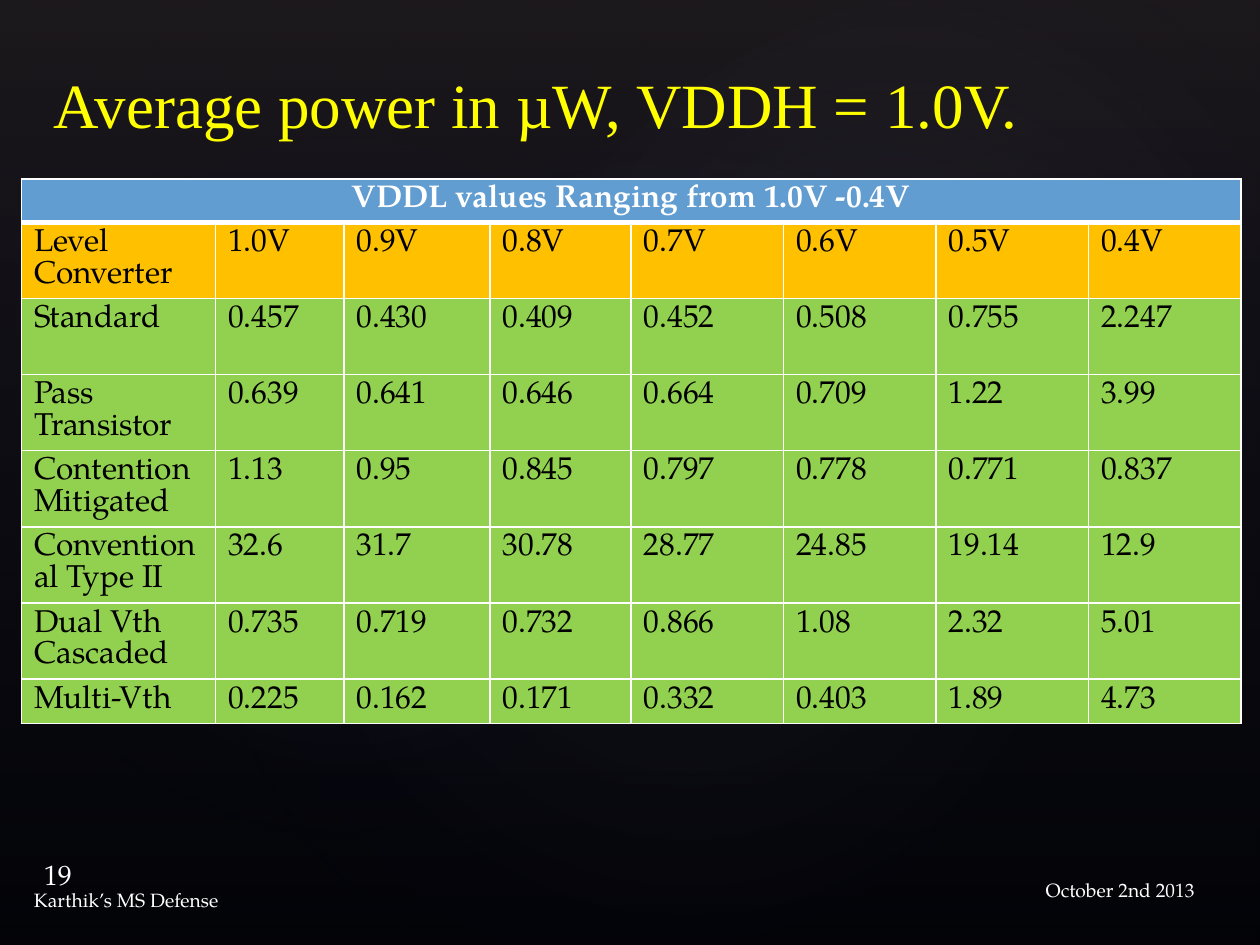
from typing import NamedTuple

from lxml.etree import SubElement
from pptx import Presentation
from pptx.dml.color import RGBColor
from pptx.enum.shapes import MSO_SHAPE as Preset
from pptx.enum.text import MSO_ANCHOR as Anchor, PP_ALIGN as Align
from pptx.oxml import parse_xml
from pptx.oxml.ns import nsdecls, qn
from pptx.util import Inches, Pt

WIDTH, HEIGHT = 10, 7.5
BLACK = RGBColor(0, 0, 0)
WHITE = RGBColor(255, 255, 255)
YELLOW = RGBColor(0xFF, 0xFF, 0)
BLUE = RGBColor(0x62, 0x9D, 0xD1)
AMBER = RGBColor(0xFF, 0xC0, 0)
GREEN = RGBColor(0x92, 0xD0, 0x50)
PLUM = RGBColor(0x50, 0x46, 0x52)
NAVY = RGBColor(0x24, 0x28, 0x52)
MIST = RGBColor(0xC4, 0xBC, 0xC6)
BODY_FONT, TITLE_FONT = "TeX Gyre Pagella", "Times New Roman"

COLUMN_WIDTHS = [1.54, 1.02, 1.16, 1.12] + [1.21] * 4
ROW_HEIGHTS = [0.34] + [0.604] * 6 + [0.35]
CAPTION = "VDDL values Ranging from 1.0V -0.4V"
POWER_ROWS = [
    ("Level\nConverter", "1.0V 0.9V 0.8V 0.7V 0.6V 0.5V 0.4V"),
    ("Standard", "0.457 0.430 0.409 0.452 0.508 0.755 2.247"),
    ("Pass Transistor", "0.639 0.641 0.646 0.664 0.709 1.22 3.99"),
    ("Contention Mitigated", "1.13 0.95 0.845 0.797 0.778 0.771 0.837"),
    ("Conventional Type II", "32.6 31.7 30.78 28.77 24.85 19.14 12.9"),
    ("Dual Vth\nCascaded", "0.735 0.719 0.732 0.866 1.08 2.32 5.01"),
    ("Multi-Vth", "0.225 0.162 0.171 0.332 0.403 1.89 4.73"),
]


class Box(NamedTuple):
    left: float
    top: float
    width: float
    height: float

    def emu(self) -> list:
        return [Inches(length) for length in self]


class Stop(NamedTuple):
    position: int
    color: RGBColor
    opacity: int


class Glow(NamedTuple):
    box: Box
    rotation: float
    opacity: int


class Label(NamedTuple):
    text: str
    box: Box
    size: int
    color: RGBColor = WHITE
    font: str = BODY_FONT
    align: Align = Align.LEFT
    anchor: Anchor = Anchor.TOP
    bottom_inset: float = 0.05


GLOWS = [
    Glow(Box(1.5, 1.14, 7.92, 6.24), 328.7, 7),
    Glow(Box(-0.3, 1.28, 6.06, 4.9), 294.3, 8),
    Glow(Box(3.58, 0.13, 7.09, 5.2), 328.7, 8),
]
LABELS = [
    Label("Average power in µW, VDDH = 1.0V.", Box(0.33, 0.17, 9.42, 1), 36,
          YELLOW, TITLE_FONT, anchor=Anchor.BOTTOM),
    Label("October 2nd 2013", Box(7.25, 6.92, 2.33, 0.4), 11, align=Align.RIGHT),
    Label("19", Box(0.25, 6.75, 2.33, 0.33), 16, anchor=Anchor.BOTTOM, bottom_inset=0.01),
    Label("Karthik’s MS Defense", Box(0.17, 7, 5, 0.4), 11),
]


def style_text(frame, size: int, color: RGBColor, font: str,
               align: Align = Align.LEFT, bold: bool = False) -> None:
    for paragraph in frame.paragraphs:
        paragraph.alignment = align
        for run in paragraph.runs:
            run.font.size, run.font.name, run.font.bold = Pt(size), font, bold
            run.font.color.rgb = color


def add_gradient(slide, preset: Preset, box: Box, stops: list[Stop],
                 direction: str, rotation: float = 0) -> None:
    """Add a borderless shape with a translucent gradient; direction is its XML element."""
    shape = slide.shapes.add_shape(preset, *box.emu())
    shape.shadow.inherit = False
    shape.rotation = rotation
    shape.line.fill.background()
    stop_xml = "".join(
        f'<a:gs pos="{stop.position * 1000}"><a:srgbClr val="{stop.color}">'
        f'<a:alpha val="{stop.opacity * 1000}"/></a:srgbClr></a:gs>' for stop in stops)
    gradient = parse_xml(f'<a:gradFill {nsdecls("a")} rotWithShape="1">'
                         f"<a:gsLst>{stop_xml}</a:gsLst>{direction}</a:gradFill>")
    shape._element.spPr.find(qn("a:prstGeom")).addnext(gradient)


def add_backdrop(slide) -> None:
    slide.background.fill.solid()
    slide.background.fill.fore_color.rgb = BLACK
    add_gradient(slide, Preset.RECTANGLE, Box(0, 0, WIDTH, HEIGHT),
                 [Stop(0, PLUM, 36), Stop(100, NAVY, 10)], '<a:lin ang="5400000" scaled="0"/>')
    radial = ('<a:path path="circle"><a:fillToRect l="50000" t="50000" '
              'r="50000" b="50000"/></a:path>')
    for glow in GLOWS:
        add_gradient(slide, Preset.OVAL, glow.box,
                     [Stop(0, MIST, glow.opacity), Stop(58, NAVY, 0), Stop(100, NAVY, 0)],
                     radial, glow.rotation)


def add_label(slide, label: Label) -> None:
    frame = slide.shapes.add_textbox(*label.box.emu()).text_frame
    frame.word_wrap = True
    frame.vertical_anchor = label.anchor
    frame.margin_bottom = Inches(label.bottom_inset)
    frame.text = label.text
    style_text(frame, label.size, label.color, label.font, label.align)


def set_borders(cell, top: float = 1, bottom: float = 1) -> None:
    properties = cell._tc.get_or_add_tcPr()
    for index, (side, points) in enumerate(zip("LRTB", (1, 1, top, bottom))):
        line = parse_xml(f'<a:ln{side} {nsdecls("a")} w="{Pt(points)}"/>')
        SubElement(SubElement(line, qn("a:solidFill")), qn("a:srgbClr")).set("val", str(WHITE))
        properties.insert(index, line)


def fill_cell(cell, text: str, fill: RGBColor, color: RGBColor = BLACK,
              align: Align = Align.LEFT, bold: bool = False) -> None:
    cell.text_frame.text = text
    style_text(cell.text_frame, 18, color, BODY_FONT, align, bold)
    cell.fill.solid()
    cell.fill.fore_color.rgb = fill


def add_power_table(slide) -> None:
    box = Box(0.17, 1.42, sum(COLUMN_WIDTHS), sum(ROW_HEIGHTS))
    table = slide.shapes.add_table(len(ROW_HEIGHTS), len(COLUMN_WIDTHS), *box.emu()).table
    for column, width in zip(table.columns, COLUMN_WIDTHS):
        column.width = Inches(width)
    for row, height in zip(table.rows, ROW_HEIGHTS):
        row.height = Inches(height)

    caption = table.cell(0, 0)
    caption.merge(table.cell(0, len(COLUMN_WIDTHS) - 1))
    fill_cell(caption, CAPTION, BLUE, WHITE, Align.CENTER, bold=True)
    for cell in table.rows[0].cells:
        set_borders(cell, bottom=3)

    for row, (converter, readings) in enumerate(POWER_ROWS, start=1):
        for column, text in enumerate([converter, *readings.split()]):
            cell = table.cell(row, column)
            fill_cell(cell, text, AMBER if row == 1 else GREEN)
            set_borders(cell, top=3 if row == 1 else 1)


def main() -> None:
    deck = Presentation()
    deck.slide_width, deck.slide_height = Inches(WIDTH), Inches(HEIGHT)
    slide = deck.slides.add_slide(deck.slide_layouts[6])
    add_backdrop(slide)
    add_power_table(slide)
    for label in LABELS:
        add_label(slide, label)
    deck.save("out.pptx")


if __name__ == "__main__":
    main()
